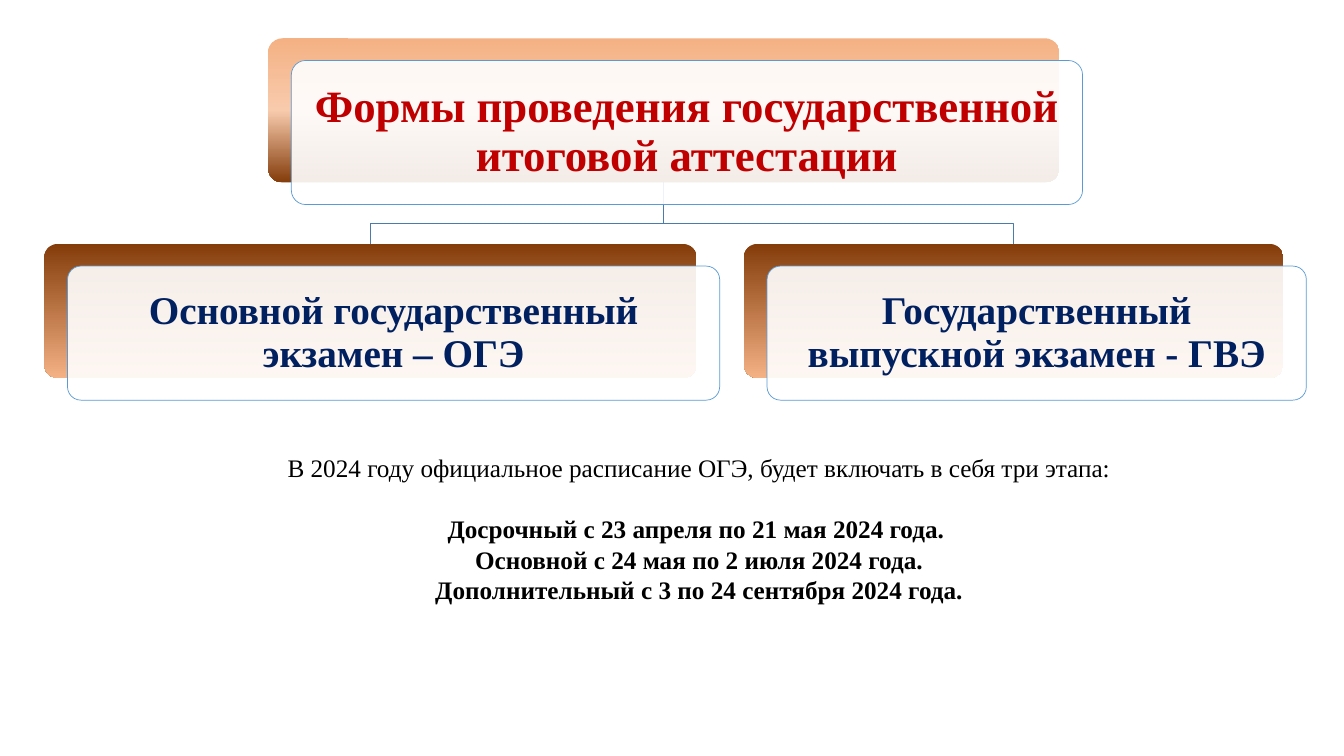
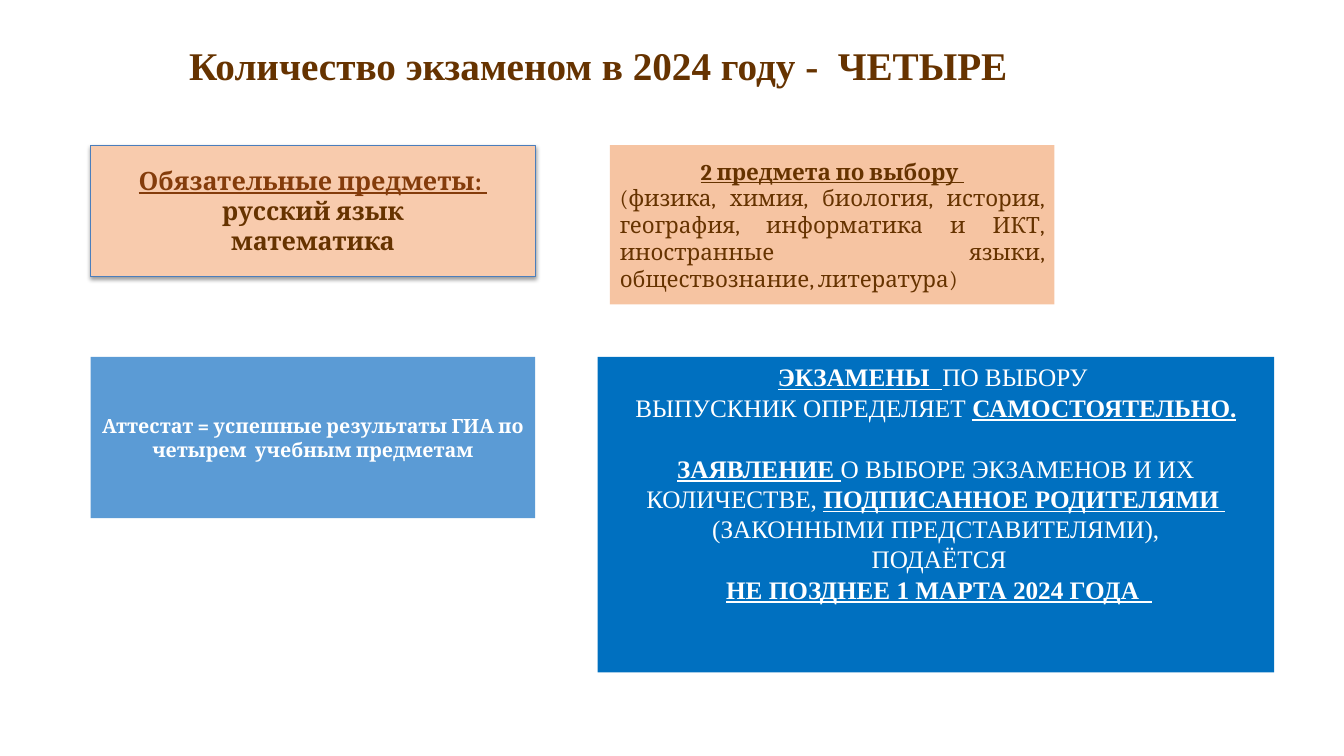
from copy import deepcopy
from dataclasses import dataclass

from lxml import etree
from pptx import Presentation
from pptx.dml.color import RGBColor
from pptx.enum import shapes, text
from pptx.oxml import ns
from pptx.util import Inches, Pt


@dataclass(frozen=True)
class Theme:
    serif: str = "Times New Roman"
    book: str = "Cambria"
    heading: int = 32
    title: int = 28
    body: int = 18
    detail: int = 16
    note: int = 14
    blank_line: int = 22
    black: str = "000000"
    white: str = "FFFFFF"
    red: str = "C00000"
    navy: str = "002060"
    brown: str = "663300"
    rust: str = "843C0B"
    orange: str = "F4B183"
    peach: str = "F8CBAD"
    sky: str = "5B9BD5"
    blue: str = "0070C0"
    edge: str = "4B7EBC"
    branch: str = "497CAB"


T = Theme()
CENTER, JUSTIFY = text.PP_ALIGN.CENTER, text.PP_ALIGN.JUSTIFY
TOP, MIDDLE = text.MSO_ANCHOR.TOP, text.MSO_ANCHOR.MIDDLE
RECT, ROUNDED = shapes.MSO_SHAPE.RECTANGLE, shapes.MSO_SHAPE.ROUNDED_RECTANGLE
STRONG = dict(bold=True, underline=True)


def rgb(code):
    return RGBColor.from_string(code)


def inches(values):
    return [Inches(v) for v in values]


def child(parent, tag, **attrs):
    return etree.SubElement(parent, ns.qn(tag), {k: str(v) for k, v in attrs.items()})


def write(tf, paragraphs, align=CENTER, anchor=MIDDLE, inset=(0.1, 0.05),
          line_spacing=None, gaps=(), **fmt):
    """Each paragraph is a string or a list of (text, format) runs.

    gaps holds the indexes of paragraphs that follow a blank line's space.
    """
    tf.word_wrap = True
    tf.vertical_anchor = anchor
    tf.margin_left = tf.margin_right = Inches(inset[0])
    tf.margin_top = tf.margin_bottom = Inches(inset[1])
    for i, runs in enumerate(paragraphs):
        p = tf.add_paragraph() if i else tf.paragraphs[0]
        p.alignment = align
        if line_spacing:
            p.line_spacing = line_spacing
        if i in gaps:
            p.space_before = Pt(T.blank_line)
        for words, own in ([(runs, {})] if isinstance(runs, str) else runs):
            look = {**fmt, **own}
            r = p.add_run()
            r.text = words
            r.font.name = look["font"]
            r.font.size = Pt(look["size"])
            r.font.color.rgb = rgb(look["color"])
            r.font.bold = look.get("bold", False)
            r.font.underline = look.get("underline", False)
    return tf


def label(s, box, paragraphs, **fmt):
    sp = s.shapes.add_textbox(*inches(box))
    return write(sp.text_frame, paragraphs, **fmt)


def panel(s, box, fill, kind=RECT, opacity=100, line=None, line_width=0.75):
    """fill is one colour, or a sequence of colours running from top to bottom."""
    sp = s.shapes.add_shape(kind, *inches(box))
    sp.shadow.inherit = False
    if kind == ROUNDED:
        sp.adjustments[0] = 0.1
    if isinstance(fill, str):
        sp.fill.solid()
        sp.fill.fore_color.rgb = rgb(fill)
        if opacity < 100:
            color = sp._element.spPr.find(ns.qn("a:solidFill"))[0]
            child(color, "a:alpha", val=opacity * 1000)
    else:
        sp.fill.gradient()
        sp.fill.gradient_angle = 270
        stops = sp._element.spPr.find(".//" + ns.qn("a:gsLst"))
        while len(stops) < len(fill):
            stops.append(deepcopy(stops[0]))
        for i, (stop, code) in enumerate(zip(sp.fill.gradient_stops, fill)):
            stop.color.rgb = rgb(code)
            stop.position = i / (len(fill) - 1)
    if line:
        sp.line.color.rgb = rgb(line)
        sp.line.width = Pt(line_width)
    else:
        sp.line.fill.background()
    return sp


def cast_shadow(sp):
    effects = sp._element.spPr.find(ns.qn("a:effectLst"))
    shadow = child(effects, "a:outerShdw", blurRad=Pt(3.1), dist=Pt(1.6),
                   dir=90 * 60000, rotWithShape=0)
    color = child(shadow, "a:srgbClr", val=T.black)
    child(color, "a:alpha", val=38000)


def branch(s, parent, target, rail_gap=0.2):
    """An open outline from the foot of one box to the head of another."""
    x, foot = parent[0] + parent[2] / 2, parent[1] + parent[3]
    end, head = target[0] + target[2] / 2, target[1]
    rail = head - rail_gap
    outline = s.shapes.build_freeform(Inches(x), Inches(foot))
    turns = [(x, rail), (end, rail), (end, head)]
    outline.add_line_segments([inches(turn) for turn in turns], close=False)
    sp = outline.convert_to_shape()
    sp.shadow.inherit = False
    sp.fill.background()
    sp.line.color.rgb = rgb(T.branch)
    sp.line.width = Pt(1)


def card(s, box, words, gradient, size, color, inset):
    """A gradient plate with a translucent sheet shifted down and right."""
    left, top, width, height = box
    panel(s, box, gradient, ROUNDED)
    sheet = panel(s, (left + 0.23, top + 0.22, width, height), T.white, ROUNDED,
                  opacity=90, line=T.sky, line_width=0.5)
    write(sheet.text_frame, [words], inset=(inset, inset), line_spacing=0.9,
          font=T.serif, size=size, color=color, bold=True)


def exam_forms_slide(s):
    root = (2.66, 0.38, 7.85, 1.43)
    forms = {
        "Основной государственный экзамен – ОГЭ": (0.44, 2.42, 6.47, 1.33),
        "Государственный выпускной экзамен - ГВЭ": (7.38, 2.42, 5.35, 1.33),
    }
    for box in reversed(forms.values()):
        branch(s, root, box)
    card(s, root, "Формы проведения государственной итоговой аттестации",
         (T.orange, T.peach, T.rust), T.heading, T.red, 0.13)
    for words, box in forms.items():
        card(s, box, words, (T.rust, T.orange), T.title, T.navy, 0.12)
    bold = dict(bold=True)
    label(s, (0.74, 4.44, 12.39, 1.62), [
        "В 2024 году официальное расписание ОГЭ, будет включать в себя три этапа:",
        [("Досрочный с 23 апреля по 21 мая 2024 года. ", bold)],
        [("Основной с 24 мая по 2 июля 2024 года.", bold)],
        [("Дополнительный с 3 по 24 сентября 2024 года.", bold)],
    ], anchor=TOP, gaps=(1,), font=T.serif, size=T.body, color=T.black)


def required_subjects(s, box):
    sp = panel(s, box, T.peach, line=T.edge)
    cast_shadow(sp)
    write(sp.text_frame, [
        [("Обязательные предметы: ", dict(color=T.rust, underline=True))],
        "русский язык",
        "математика",
    ], font=T.book, size=T.body, color=T.brown, bold=True)


def optional_subjects(s, box):
    tf = panel(s, box, T.orange, opacity=75).text_frame
    write(tf, [
        [("2 предмета по выбору ", STRONG)],
        "(физика, химия, биология, история, география, информатика и ИКТ, "
        "иностранные языки, обществознание, литература)",
    ], align=JUSTIFY, font=T.book, size=T.detail, color=T.brown)
    tf.paragraphs[0].alignment = CENTER


def certificate(s, box):
    write(panel(s, box, T.sky).text_frame,
          ["Аттестат = успешные результаты ГИА по четырем  учебным предметам"],
          font=T.book, size=T.note, color=T.white, bold=True)


def application(s, box):
    write(panel(s, box, T.blue).text_frame, [
        [("ЭКЗАМЕНЫ  ", STRONG), ("ПО ВЫБОРУ ", {})],
        [("ВЫПУСКНИК ОПРЕДЕЛЯЕТ ", {}), ("САМОСТОЯТЕЛЬНО.", STRONG)],
        [("ЗАЯВЛЕНИЕ ", STRONG),
         ("О ВЫБОРЕ ЭКЗАМЕНОВ И ИХ КОЛИЧЕСТВЕ, ", {}),
         ("ПОДПИСАННОЕ РОДИТЕЛЯМИ ", STRONG)],
        "(ЗАКОННЫМИ ПРЕДСТАВИТЕЛЯМИ),",
        " ПОДАЁТСЯ",
        [(" ", {}), ("НЕ ПОЗДНЕЕ 1 МАРТА 2024 ГОДА  ", STRONG)],
    ], anchor=TOP, gaps=(2,), font=T.serif, size=T.body, color=T.white)


def exam_count_slide(s):
    left, width = 0.9, 4.41
    upper, lower = 1.44, 3.54
    label(s, (0.2, 0.05, 11.47, 1.25), ["Количество экзаменом в 2024 году -  ЧЕТЫРЕ"],
          line_spacing=0.9, font=T.serif, size=T.title, color=T.brown, bold=True)
    required_subjects(s, (left, upper, width, 1.3))
    optional_subjects(s, (6.05, upper, width, 1.58))
    certificate(s, (left, lower, width, 1.6))
    application(s, (5.93, lower, 6.71, 3.13))


def main():
    prs = Presentation()
    prs.slide_width, prs.slide_height = inches((40 / 3, 7.5))
    for build in (exam_forms_slide, exam_count_slide):
        build(prs.slides.add_slide(prs.slide_layouts[6]))
    prs.save("out.pptx")


if __name__ == "__main__":
    main()
